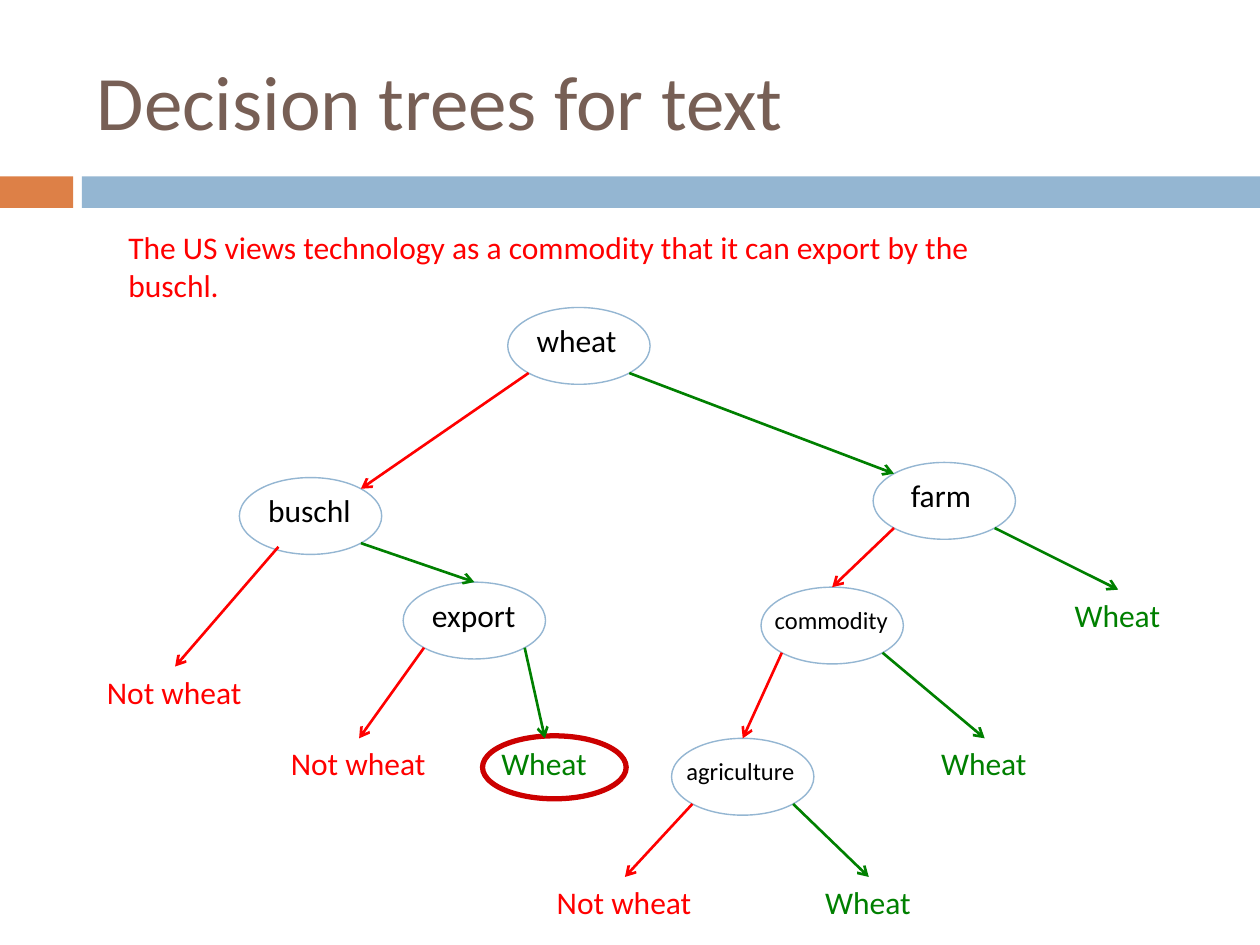
"""Build a slide showing a decision tree that classifies text as wheat or not wheat."""
from math import sqrt

from lxml import etree
from pptx import Presentation
from pptx.dml.color import RGBColor
from pptx.enum.shapes import MSO_CONNECTOR, MSO_SHAPE
from pptx.enum.text import MSO_ANCHOR
from pptx.oxml.ns import qn
from pptx.util import Inches, Pt

RECTANGLE, ELLIPSE = MSO_SHAPE.RECTANGLE, MSO_SHAPE.OVAL
STRAIGHT = MSO_CONNECTOR.STRAIGHT
TOP, MIDDLE = MSO_ANCHOR.TOP, MSO_ANCHOR.MIDDLE

THEME = {
    "font": "Calibri",
    "title": "775F55", "accent": "DD8047", "band": "94B6D2",
    "node": "000000", "no": "FF0000", "yes": "008000", "ring": "CC0000",
    "title_size": 44, "text_size": 18, "small_size": 14,
    "node_line": 0.79, "arrow_line": 1.5, "ring_line": 3,
}

COLUMNS, ROWS = 100, 75
CELL = Inches(0.1)
NODE_WIDTH, NODE_HEIGHT = 11.3, 6.1
LABEL_HEIGHT, SMALL_HEIGHT = 4, 3.4
BAND_TOP, BAND_HEIGHT = 14, 2.5
ACCENT_WIDTH, BAND_LEFT = 5.8, 6.5

TITLE = ("Decision trees for text", (6.7, 2.5, 89.2, 10.8))
SENTENCE = ("The US views technology as a commodity that it can export by the buschl.",
            (9.2, 17.6, 75.1, LABEL_HEIGHT))
RING = (38.3, 58.4, 11.4, 5)

# name: left, top, label indent, label width, size
NODES = {
    "wheat": (40.3, 24.4, 1.3, 8.5, "text_size"),
    "buschl": (19, 37.9, 1.3, 8.6, "text_size"),
    "export": (32, 46.2, 1.3, 8.8, "text_size"),
    "farm": (69.3, 36.7, 2, 6.9, "text_size"),
    "commodity": (60.4, 46.6, 0.1, 11.1, "small_size"),
    "agriculture": (53.3, 58.6, 0.2, 10.7, "small_size"),
}
LEAF_KINDS = {"no": ("Not wheat", 12.8), "yes": ("Wheat", 8.9)}
LEAVES = [
    ("buschl", "no", 7.5, 52.9),
    ("export", "no", 22.1, 58.6),
    ("export", "yes", 38.8, 58.6),
    ("agriculture", "no", 43.2, 69.6),
    ("agriculture", "yes", 64.5, 69.6),
    ("commodity", "yes", 73.7, 58.6),
    ("farm", "yes", 84.3, 46.8),
]
BRANCHES = [
    ("wheat", "no", "buschl", "top_right"),
    ("wheat", "yes", "farm", "top_left"),
    ("buschl", "yes", "export", "top"),
    ("farm", "no", "commodity", "top"),
    ("commodity", "no", "agriculture", "top"),
]
DIAGONAL = sqrt(0.5)
SITES = {"top": (0, -1), "top_left": (-DIAGONAL, -DIAGONAL), "top_right": (DIAGONAL, -DIAGONAL),
         "no": (-DIAGONAL, DIAGONAL), "yes": (DIAGONAL, DIAGONAL)}
SHIFTED_STARTS = {("buschl", "no"): (22.1, 43.4)}


def cells(*lengths):
    return [round(length * CELL) for length in lengths]


def color(name):
    return RGBColor.from_string(THEME[name])


def add_shape(page, kind, place, fill=None, line=None, weight=None):
    shape = page.shapes.add_shape(kind, *cells(*place))
    shape.shadow.inherit = False
    if fill:
        shape.fill.solid()
        shape.fill.fore_color.rgb = color(fill)
    else:
        shape.fill.background()
    if line:
        shape.line.color.rgb = color(line)
        shape.line.width = Pt(THEME[weight])
    else:
        shape.line.fill.background()


def add_text(page, text, place, ink, size="text_size", wrap=False, anchor=TOP):
    box = page.shapes.add_textbox(*cells(*place))
    for name, value in {"word_wrap": wrap, "vertical_anchor": anchor}.items():
        setattr(box.text_frame, name, value)
    span = box.text_frame.paragraphs[0].add_run()
    span.text = text
    for name, value in {"name": THEME["font"], "size": Pt(THEME[size])}.items():
        setattr(span.font, name, value)
    span.font.color.rgb = color(ink)


def add_arrow(page, start, end, answer):
    arrow = page.shapes.add_connector(STRAIGHT, *cells(*start, *end))
    arrow.line.color.rgb = color(answer)
    arrow.line.width = Pt(THEME["arrow_line"])
    etree.SubElement(arrow.line._get_or_add_ln(), qn("a:tailEnd"), type="arrow")
    etree.SubElement(arrow._element.spPr, qn("a:effectLst"))


def node_point(name, site):
    left, top = NODES[name][:2]
    across, down = SITES[site]
    return left + NODE_WIDTH / 2 * (1 + across), top + NODE_HEIGHT / 2 * (1 + down)


def branch_start(parent, answer):
    return SHIFTED_STARTS.get((parent, answer), node_point(parent, answer))


def add_nodes(page):
    for name, (left, top, indent, width, size) in NODES.items():
        add_shape(page, ELLIPSE, (left, top, NODE_WIDTH, NODE_HEIGHT),
                  line="band", weight="node_line")
        drop, height = (0.6, LABEL_HEIGHT) if size == "text_size" else (0.9, SMALL_HEIGHT)
        add_text(page, name, (left + indent, top + drop, width, height), "node", size)


def add_leaves(page):
    for parent, answer, left, top in LEAVES:
        text, width = LEAF_KINDS[answer]
        add_text(page, text, (left, top, width, LABEL_HEIGHT), answer)
        add_arrow(page, branch_start(parent, answer), (left + width / 2, top), answer)


def main():
    deck = Presentation()
    deck.slide_width, deck.slide_height = cells(COLUMNS, ROWS)
    page = deck.slides.add_slide(deck.slide_layouts[6])
    add_shape(page, RECTANGLE, (0, BAND_TOP, ACCENT_WIDTH, BAND_HEIGHT), fill="accent")
    add_shape(page, RECTANGLE, (BAND_LEFT, BAND_TOP, COLUMNS - BAND_LEFT, BAND_HEIGHT), fill="band")
    add_text(page, *TITLE, "title", "title_size", wrap=True, anchor=MIDDLE)
    add_text(page, *SENTENCE, "no", wrap=True)
    add_shape(page, ELLIPSE, RING, line="ring", weight="ring_line")
    add_nodes(page)
    add_leaves(page)
    for parent, answer, child, site in BRANCHES:
        add_arrow(page, branch_start(parent, answer), node_point(child, site), answer)
    deck.save("out.pptx")


if __name__ == "__main__":
    main()
